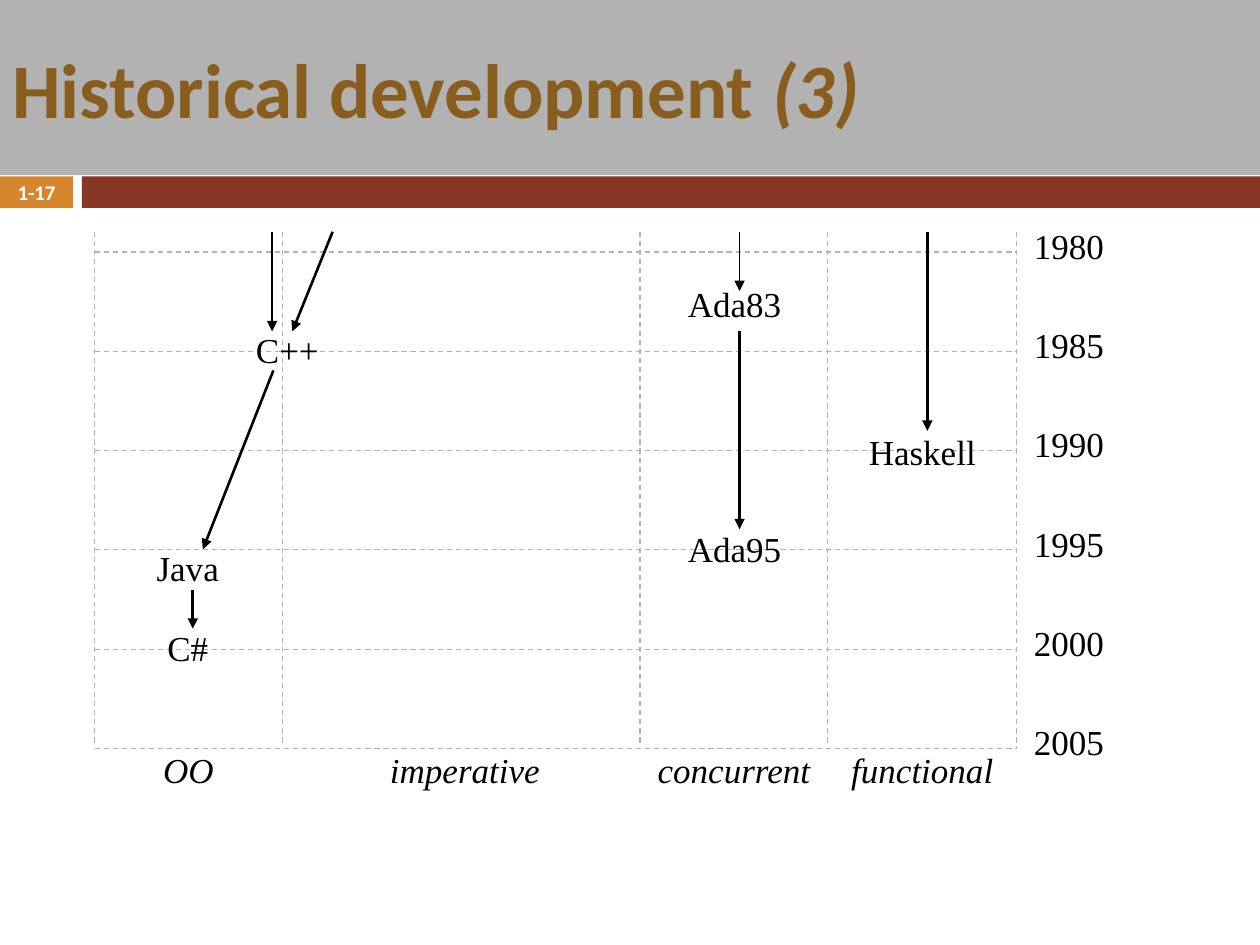
from dataclasses import dataclass

import pptx
import pptx.dml.color
import pptx.enum.dml
import pptx.enum.shapes
import pptx.enum.text
import pptx.oxml
import pptx.oxml.ns
import pptx.util
from pptx.util import Inches

RGBColor = pptx.dml.color.RGBColor
BLACK = RGBColor(0x00, 0x00, 0x00)
WHITE = RGBColor(0xFF, 0xFF, 0xFF)
GRAY = RGBColor(0xB2, 0xB2, 0xB2)
BROWN = RGBColor(0x89, 0x5D, 0x1D)
ORANGE = RGBColor(0xD6, 0x86, 0x2D)
RED = RGBColor(0x87, 0x36, 0x24)

ALIGN = pptx.enum.text.PP_ALIGN
ANCHOR = pptx.enum.text.MSO_ANCHOR
SERIF = "Times New Roman"

TOP, FIRST, LAST = 1.84, 2.0, 5.94
EDGES = [0.75, 2.24, 5.08, 6.57, 8.07]
STYLES = ["OO", "imperative", "concurrent", "functional"]
YEARS = range(1980, 2006, 5)
STEP = (LAST - FIRST) / (len(YEARS) - 1)
WIDE, TALL = 1.18, 0.33


@dataclass
class Lang:
    name: str
    left: float
    top: float


@dataclass
class Arrow:
    x1: float
    y1: float
    x2: float
    y2: float
    width: float = 1.5


LANGS = [
    Lang("Ada83", 5.24, 2.24),
    Lang("C++", 1.69, 2.61),
    Lang("Java", 0.9, 4.34),
    Lang("C#", 0.9, 4.97),
    Lang("Haskell", 6.73, 3.42),
    Lang("Ada95", 5.24, 4.19),
]
ARROWS = [
    Arrow(5.87, TOP, 5.87, 2.31, 0.75),
    Arrow(2.64, TOP, 2.32, 2.63),
    Arrow(2.16, TOP, 2.16, 2.63, 0.75),
    Arrow(2.17, 2.94, 1.61, 4.36),
    Arrow(1.53, 4.68, 1.53, 4.99),
    Arrow(7.36, TOP, 7.36, 3.42),
    Arrow(5.87, 2.63, 5.87, 4.2),
]


def add_bar(slide, left: float, top: float, width: float, height: float,
            color: RGBColor):
    bar = slide.shapes.add_shape(
        pptx.enum.shapes.MSO_SHAPE.RECTANGLE,
        Inches(left), Inches(top), Inches(width), Inches(height))
    bar.shadow.inherit = False
    bar.fill.solid()
    bar.fill.fore_color.rgb = color
    bar.line.fill.background()
    return bar


def add_box(slide, left: float, top: float, width: float, height: float):
    return slide.shapes.add_textbox(
        Inches(left), Inches(top), Inches(width), Inches(height))


def put_text(shape, *parts: str, size: float = 20, font: str = SERIF,
             color: RGBColor = BLACK, bold: bool = False,
             italic: tuple = (False,), align=ALIGN.CENTER,
             anchor=ANCHOR.TOP, inset: bool = False) -> None:
    """Write one paragraph; italic holds one flag for each part."""
    frame = shape.text_frame
    frame.word_wrap = True
    frame.vertical_anchor = anchor
    if not inset:
        frame.margin_left = frame.margin_right = 0
        frame.margin_top = frame.margin_bottom = 0
    para = frame.paragraphs[0]
    para.alignment = align
    for part, slant in zip(parts, italic):
        run = para.add_run()
        run.text = part
        run.font.name = font
        run.font.size = pptx.util.Pt(size)
        run.font.bold = bold
        run.font.italic = slant
        run.font.color.rgb = color


def add_line(slide, x1: float, y1: float, x2: float, y2: float,
             color: RGBColor = GRAY, width: float = 0.75,
             arrow: bool = False) -> None:
    """Draw a dashed grid line, or a solid line with an arrowhead."""
    line = slide.shapes.add_connector(
        pptx.enum.shapes.MSO_CONNECTOR.STRAIGHT,
        Inches(x1), Inches(y1), Inches(x2), Inches(y2))
    line.line.color.rgb = color
    line.line.width = pptx.util.Pt(width)
    qn = pptx.oxml.ns.qn
    props = line._element.spPr
    if arrow:
        tail = props.find(qn("a:ln")).makeelement(
            qn("a:tailEnd"), {"type": "triangle"})
        props.find(qn("a:ln")).append(tail)
    else:
        line.line.dash_style = pptx.enum.dml.MSO_LINE.DASH
    props.append(props.makeelement(qn("a:effectLst"), {}))


def draw_head(slide) -> None:
    add_bar(slide, 0, 1.4, 0.58, 0.25, ORANGE)
    add_bar(slide, 0.65, 1.4, 9.35, 0.25, RED)
    put_text(add_box(slide, 0, 1.39, 0.58, 0.27), "1-17", size=11.9,
             font="Calibri", color=WHITE, bold=True, anchor=ANCHOR.MIDDLE)
    put_text(add_bar(slide, 0, 0, 10, 1.39, GRAY),
             "Historical development ", "(3)", size=44, font="Calibri",
             color=BROWN, bold=True, italic=(False, True),
             align=ALIGN.LEFT, anchor=ANCHOR.MIDDLE, inset=True)


def draw_grid(slide) -> None:
    for x in EDGES:
        add_line(slide, x, TOP, x, LAST if x == EDGES[-1] else 5.9)
    for row, year in enumerate(YEARS):
        y = FIRST + row * STEP
        add_line(slide, EDGES[0], y, EDGES[-1], y)
        put_text(add_box(slide, EDGES[-1], y - 0.27, 0.79, 0.43),
                 str(year), align=ALIGN.RIGHT, inset=True)
    for style, left, right in zip(STYLES, EDGES, EDGES[1:]):
        mid = 3.69 if style == "imperative" else (left + right) / 2
        put_text(add_box(slide, mid - 0.75, LAST, 1.5, TALL), style,
                 italic=(True,))


def main() -> None:
    deck = pptx.Presentation()
    deck.slide_width, deck.slide_height = Inches(10), Inches(7.5)
    slide = deck.slides.add_slide(deck.slide_layouts[6])
    draw_head(slide)
    draw_grid(slide)
    for lang in LANGS:
        put_text(add_box(slide, lang.left, lang.top, WIDE, TALL), lang.name)
    for a in ARROWS:
        add_line(slide, a.x1, a.y1, a.x2, a.y2, BLACK, a.width, True)
    deck.save("out.pptx")


if __name__ == "__main__":
    main()
